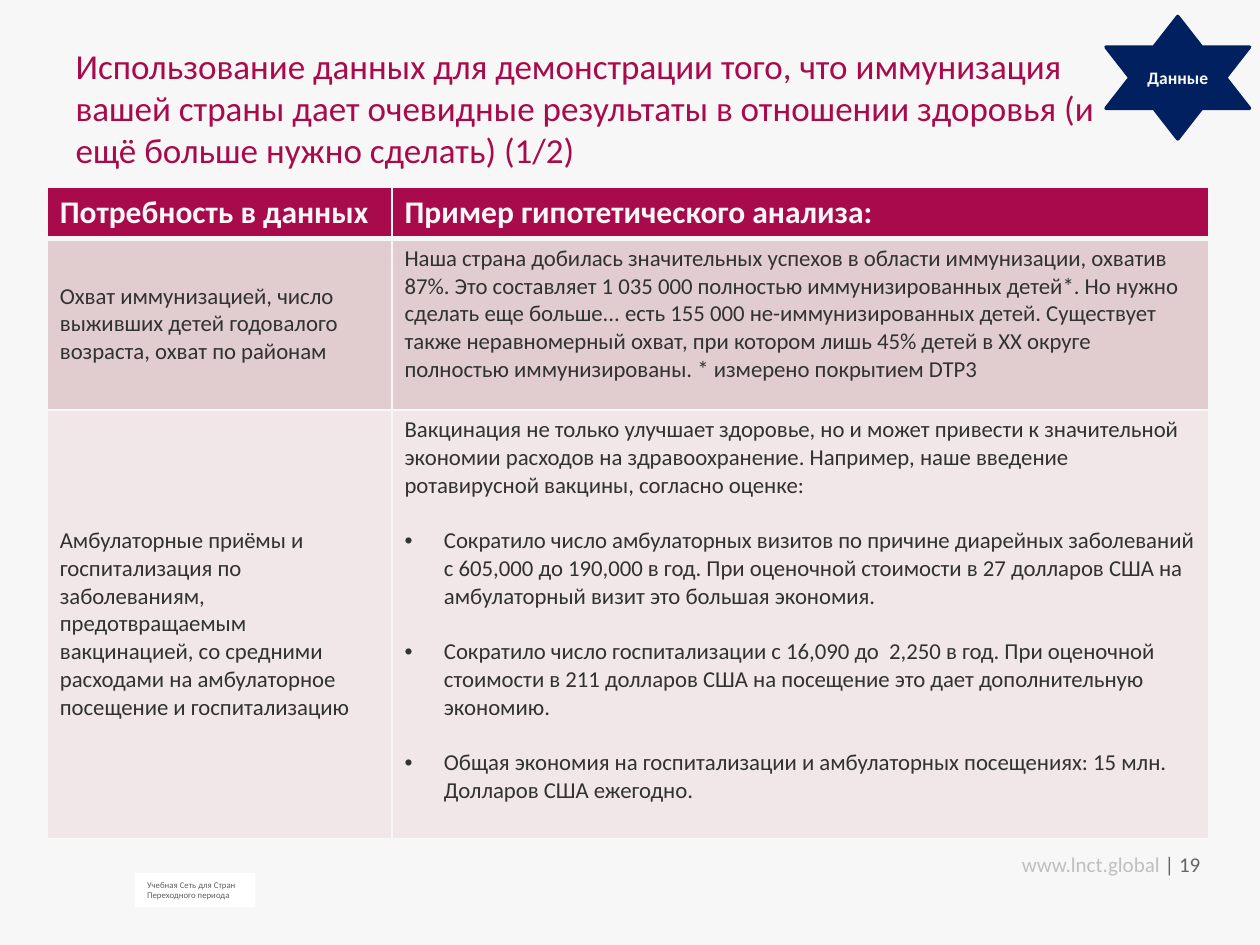
from lxml.etree import SubElement
from pptx import Presentation
from pptx.dml.color import RGBColor
from pptx.enum.shapes import MSO_SHAPE
from pptx.enum.text import MSO_ANCHOR, MSO_AUTO_SIZE, PP_ALIGN
from pptx.oxml import parse_xml
from pptx.oxml.ns import nsdecls, qn
from pptx.util import Pt

COLORS = {
    "background": "F7F7F7", "accent": "A80A4B", "text": "313231",
    "row_dark": "E1CCD0", "row_light": "F1E7E9", "navy": "002060",
    "white": "FFFFFF", "link": "BFBFBF", "number": "636466", "label": "606060",
}
FONT = "Calibri"
LINE_GAP = 15.85

HEADERS = ["Потребность в данных", "Пример гипотетического анализа:"]
COVERAGE = [
    "Охват иммунизацией, число выживших детей годовалого возраста, охват по районам",
    "Наша страна добилась значительных успехов в области иммунизации, охватив 87%. "
    "Это составляет 1 035 000 полностью иммунизированных детей*. Но нужно сделать еще "
    "больше... есть 155 000 не-иммунизированных детей. Существует также неравномерный "
    "охват, при котором лишь 45% детей в XX округе полностью иммунизированы. "
    "* измерено покрытием DTP3",
]
VISITS = [
    "Амбулаторные приёмы и госпитализация по заболеваниям, предотвращаемым вакцинацией, "
    "со средними расходами на амбулаторное посещение и госпитализацию",
    "Вакцинация не только улучшает здоровье, но и может привести к значительной экономии "
    "расходов на здравоохранение. Например, наше введение ротавирусной вакцины, согласно "
    "оценке:\n"
    "Сократило число амбулаторных визитов по причине диарейных заболеваний с 605,000 до "
    "190,000 в год. При оценочной стоимости в 27 долларов США на амбулаторный визит это "
    "большая экономия.\n"
    "Сократило число госпитализации с 16,090 до  2,250 в год. При оценочной стоимости в "
    "211 долларов США на посещение это дает дополнительную экономию.\n"
    "Общая экономия на госпитализации и амбулаторных посещениях: 15 млн. Долларов США "
    "ежегодно.",
]


def rgb(name):
    return RGBColor.from_string(COLORS[name])


def style(p, size, color, bold=False):
    for r in p.runs:
        r.font.name = FONT
        r.font.size = Pt(size)
        r.font.bold = bold
        r.font.color.rgb = rgb(color)


def add_bullet(p, indent):
    pPr = p._p.get_or_add_pPr()
    pPr.set("marL", str(Pt(indent)))
    pPr.set("indent", str(-Pt(indent)))
    SubElement(pPr, qn("a:buFont")).set("typeface", "Arial")
    SubElement(pPr, qn("a:buChar")).set("char", "•")


def set_borders(cell, widths):
    tcPr = cell._tc.get_or_add_tcPr()
    for i, (side, width) in enumerate(widths.items()):
        tcPr.insert(i, parse_xml(
            f'<a:ln{side} {nsdecls("a")} w="{Pt(width)}"><a:solidFill>'
            f'<a:srgbClr val="{COLORS["background"]}"/></a:solidFill></a:ln{side}>'))


def add_title(s, x, y, w, h):
    sp = s.shapes.title
    sp.left, sp.top, sp.width, sp.height = Pt(x), Pt(y), Pt(w), Pt(h)
    tf = sp.text_frame
    tf.text = ("Использование данных для демонстрации того, что иммунизация вашей страны "
               "дает очевидные результаты в отношении здоровья (и ещё больше нужно "
               "сделать) (1/2)")
    tf.auto_size = MSO_AUTO_SIZE.NONE
    tf.vertical_anchor = MSO_ANCHOR.TOP
    p = tf.paragraphs[0]
    p.alignment = PP_ALIGN.LEFT
    style(p, 20, "accent")


def add_data_table(s, x, y, w, h):
    table = s.shapes.add_table(3, 2, Pt(x), Pt(y), Pt(w), Pt(h)).table
    first_width, header_height, coverage_height = 197, 28, 98
    for col, width in zip(table.columns, (first_width, w - first_width)):
        col.width = Pt(width)
    heights = (header_height, coverage_height, h - header_height - coverage_height)
    for row, height in zip(table.rows, heights):
        row.height = Pt(height)
    fills = ("accent", "row_dark", "row_light")
    for i, (texts, fill) in enumerate(zip((HEADERS, COVERAGE, VISITS), fills)):
        for j, text in enumerate(texts):
            cell = table.cell(i, j)
            cell.text_frame.text = text
            cell.fill.solid()
            cell.fill.fore_color.rgb = rgb(fill)
            set_borders(cell, {"L": 1, "R": 1, "T": 3 if i == 1 else 1,
                               "B": 3 if i == 0 else 1})
            if i and j == 0:
                cell.vertical_anchor = MSO_ANCHOR.MIDDLE
            for k, p in enumerate(cell.text_frame.paragraphs):
                if k:
                    p.space_before = Pt(LINE_GAP)
                    add_bullet(p, 22.5)
                if i == 0:
                    style(p, 18, "background", True)
                else:
                    style(p, 13, "text")


def add_footer(s, x, y, w, h):
    tf = s.shapes.add_textbox(Pt(x), Pt(y), Pt(w), Pt(h)).text_frame
    tf.word_wrap = True
    tf.vertical_anchor = MSO_ANCHOR.MIDDLE
    p = tf.paragraphs[0]
    p.alignment = PP_ALIGN.RIGHT
    for text in ("www.lnct.global ", "| 19"):
        p.add_run().text = text
    style(p, 12, "link")
    p.runs[1].font.color.rgb = rgb("number")


def add_filled_shape(s, kind, box, fill, text):
    sp = s.shapes.add_shape(kind, *map(Pt, box))
    sp.shadow.inherit = False
    sp.fill.solid()
    sp.fill.fore_color.rgb = rgb(fill)
    sp.line.fill.background()
    sp.text_frame.text = text
    return sp


def add_network_label(s, x, y, w, h):
    sp = add_filled_shape(s, MSO_SHAPE.RECTANGLE, (x, y, w, h), "white",
                          "Учебная Сеть для Стран Переходного периода")
    sp.text_frame.vertical_anchor = MSO_ANCHOR.TOP
    p = sp.text_frame.paragraphs[0]
    p.alignment = PP_ALIGN.LEFT
    style(p, 5, "label")


def add_star_badge(s, x, y, w, h):
    sp = add_filled_shape(s, MSO_SHAPE.STAR_6_POINT, (x, y, w, h), "navy", "Данные")
    sp.line.color.rgb = rgb("navy")
    sp.line.width = Pt(2)
    sp.text_frame.vertical_anchor = MSO_ANCHOR.MIDDLE
    p = sp.text_frame.paragraphs[0]
    p.alignment = PP_ALIGN.CENTER
    style(p, 10, "background", True)


def main():
    prs = Presentation()
    prs.slide_width, prs.slide_height = Pt(720), Pt(540)
    s = prs.slides.add_slide(prs.slide_layouts[5])
    s.background.fill.solid()
    s.background.fill.fore_color.rgb = rgb("background")
    add_title(s, 36, 21.6, 597, 90)
    add_data_table(s, 27, 107, 664, 371)
    add_footer(s, 525, 479.5, 168, 29)
    add_network_label(s, 77, 499, 69, 19.5)
    add_star_badge(s, 632, 9.4, 82, 70)
    prs.save("out.pptx")


if __name__ == "__main__":
    main()
